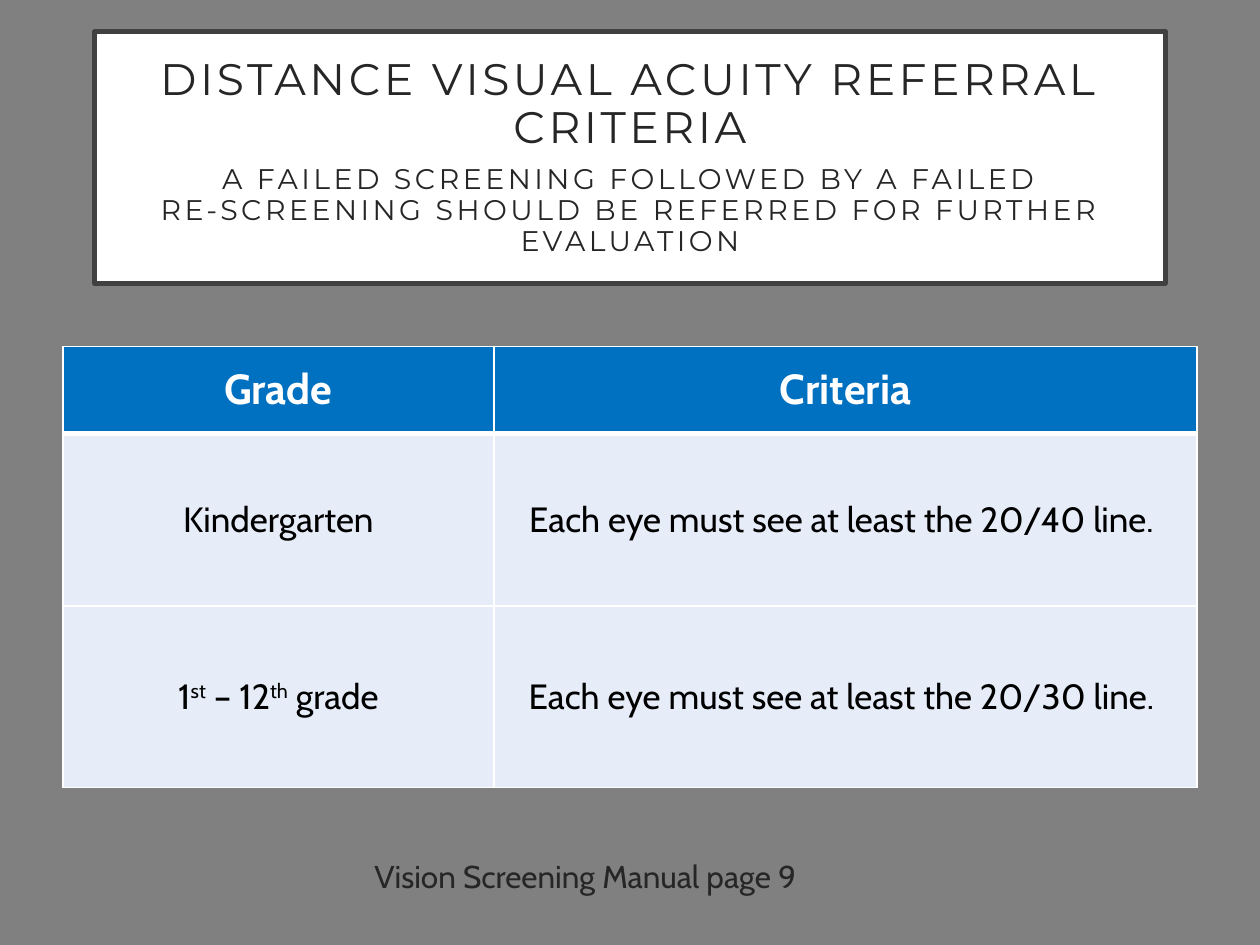
from pptx import Presentation
from pptx.dml.color import RGBColor as RGB
from pptx.enum.shapes import MSO_SHAPE as Shape
from pptx.enum.text import MSO_ANCHOR as Anchor, PP_ALIGN as Align
from pptx.oxml import parse_xml
from pptx.oxml.ns import nsdecls
from pptx.util import Inches, Pt

DARK, WHITE, BLACK = "262626", "FFFFFF", "000000"
BLUE, PALE, GRAY, EDGE = "0070C0", "E6EDF8", "808080", "404040"


def paint(fill, color):
    fill.solid()
    fill.fore_color.rgb = RGB.from_string(color)


def write(par, text, size=20, font="Cabin", color=BLACK, bold=False,
          track=0, before=0, line=None):
    """Fill a centred paragraph; ^ toggles superscript, \\v breaks the line."""
    par.alignment = Align.CENTER
    par.space_before = Pt(before)
    par.line_spacing = line
    for row, piece in enumerate(text.split("\v")):
        if row:
            par.add_line_break()
        for n, part in enumerate(piece.split("^")):
            run = par.add_run()
            run.text = part
            run.font.size, run.font.name, run.font.bold = Pt(size), font, bold
            run.font.color.rgb = RGB.from_string(color)
            props = run.font._element
            if track:
                props.set("spc", str(track * 100))
            if n % 2:
                props.set("baseline", "30000")


def border(cell, **widths):
    """Draw white cell edges, widths in points."""
    props = cell._tc.get_or_add_tcPr()
    for side in "LRTB":
        wide = Pt(widths.get(side, 1))
        props.append(parse_xml(
            f'<a:ln{side} {nsdecls("a")} w="{wide}"><a:solidFill>'
            f'<a:srgbClr val="{WHITE}"/></a:solidFill></a:ln{side}>'))


def add_title(slide, x, y, w, h):
    box = slide.shapes.add_shape(
        Shape.RECTANGLE, Inches(x), Inches(y), Inches(w), Inches(h))
    box.shadow.inherit = False
    paint(box.fill, WHITE)
    paint(box.line.fill, EDGE)
    box.line.width = Pt(2.5)
    frame = box.text_frame
    frame.word_wrap = True
    frame.vertical_anchor = Anchor.MIDDLE
    frame.margin_left = frame.margin_right = Inches(0.2)
    frame.margin_top = frame.margin_bottom = Inches(0.2)
    look = dict(font="Montserrat", color=DARK, track=2, line=0.9)
    write(frame.paragraphs[0], "DISTANCE VISUAL ACUITY REFERRAL CRITERIA",
          size=25.2, **look)
    write(frame.add_paragraph(),
          "A FAILED SCREENING FOLLOWED BY A FAILED\v"
          "RE-SCREENING SHOULD BE REFERRED FOR FURTHER EVALUATION",
          size=16.2, before=7, **look)


def add_grid(slide, x, y, w, h):
    rows = [
        ("Grade", "Criteria"),
        ("Kindergarten", "Each eye must see at least the 20/40 line. "),
        ("1^st^ – 12^th^ grade", "Each eye must see at least the 20/30 line. "),
    ]
    table = slide.shapes.add_table(
        len(rows), 2, Inches(x), Inches(y), Inches(w), Inches(h)).table
    for col, wide in zip(table.columns, (0.38 * w, 0.62 * w)):
        col.width = Inches(wide)
    for row, tall in zip(table.rows, (0.69, 1.37, h - 2.06)):
        row.height = Inches(tall)
    for r, texts in enumerate(rows):
        head = r == 0
        look = dict(size=24, color=WHITE, bold=True) if head else {}
        for c, text in enumerate(texts):
            cell = table.cell(r, c)
            # Thick rule between the header and the body
            border(cell, T=3 if r == 1 else 1, B=3 if head else 1)
            paint(cell.fill, BLUE if head else PALE)
            cell.vertical_anchor = Anchor.MIDDLE
            write(cell.text_frame.paragraphs[0], text, **look)


def add_note(slide, x, y, w, h):
    box = slide.shapes.add_textbox(Inches(x), Inches(y), Inches(w), Inches(h))
    box.text_frame.word_wrap = True
    write(box.text_frame.paragraphs[0], "Vision Screening Manual page 9",
          size=18, color=DARK)


def main():
    deck = Presentation()
    deck.slide_width, deck.slide_height = Inches(10), Inches(7.5)
    slide = deck.slides.add_slide(deck.slide_layouts[6])
    paint(slide.background.fill, GRAY)
    add_title(slide, 0.75, 0.25, 8.5, 2)
    add_grid(slide, 0.5, 2.75, 9, 3.5)
    add_note(slide, 2.83, 6.75, 3.63, 0.4)
    deck.save("out.pptx")


if __name__ == "__main__":
    main()
